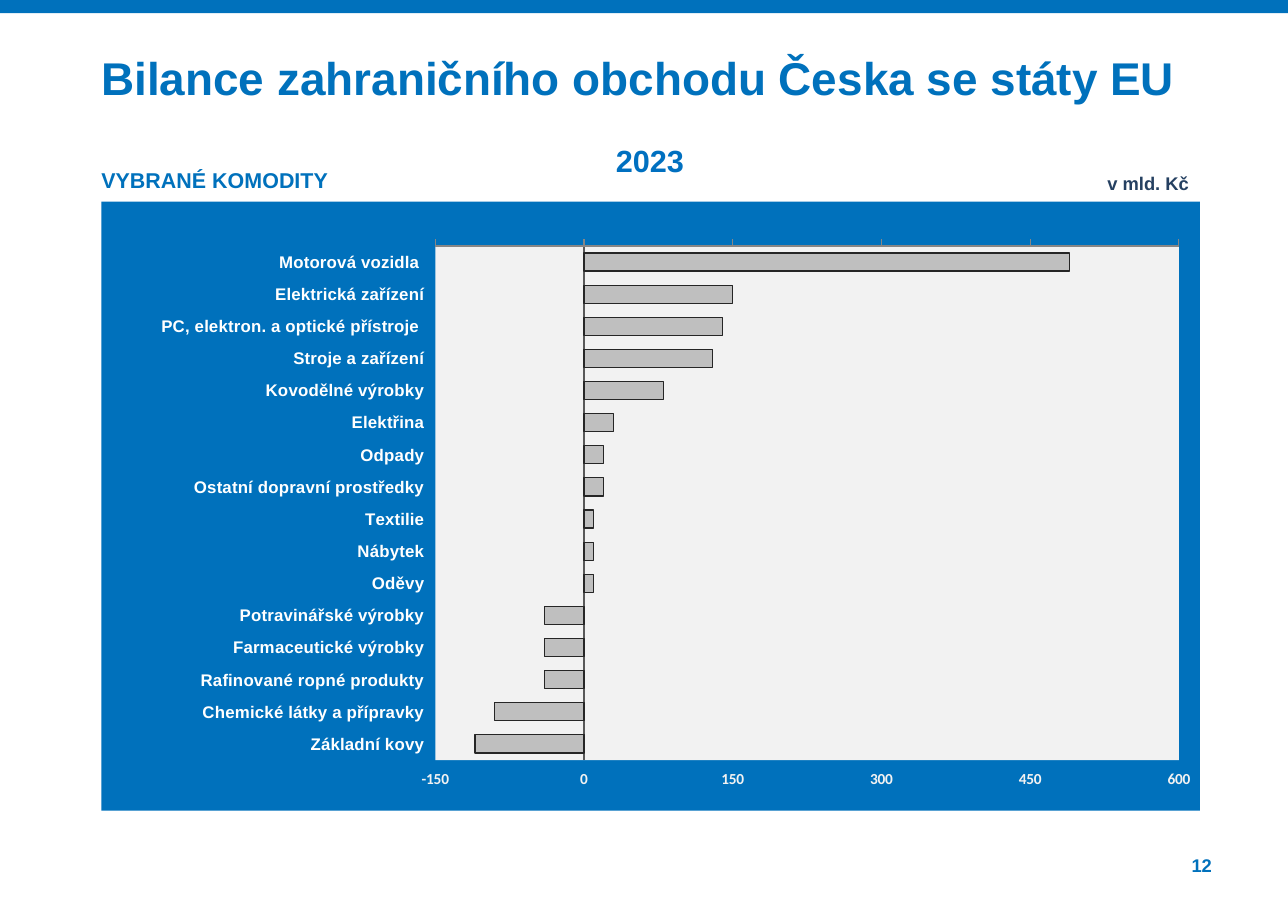
from dataclasses import dataclass

from lxml.etree import SubElement
from pptx import Presentation
from pptx.chart.data import CategoryChartData
from pptx.dml.color import RGBColor
from pptx.enum.chart import XL_CHART_TYPE, XL_TICK_LABEL_POSITION, XL_TICK_MARK
from pptx.enum.shapes import MSO_SHAPE
from pptx.enum.text import MSO_ANCHOR, MSO_AUTO_SIZE, PP_ALIGN
from pptx.oxml import parse_xml
from pptx.oxml.ns import nsdecls, qn
from pptx.util import Inches, Pt

BLUE = "0071BC"
PALE = "F2F2F2"
AXIS_GREY = "868686"


@dataclass(frozen=True)
class Label:
    text: str
    left: float
    top: float
    width: float
    height: float
    size: float
    color: str = BLUE
    align: PP_ALIGN = PP_ALIGN.LEFT
    inset_x: float = 0
    inset_y: float = 0
    line_spacing: float = 1.0


HEADING = Label("Bilance zahraničního obchodu Česka se státy EU", 0.92, 0.51, 9.97, 0.71, 30,
                line_spacing=0.9)
LABELS = [
    Label("12", 10.22, 7.75, 0.78, 0.21, 12, align=PP_ALIGN.RIGHT),
    Label("v mld. Kč", 9.31, 1.51, 1.58, 0.36, 12, "254061", PP_ALIGN.RIGHT, 0.1, 0.05),
    Label("VYBRANÉ KOMODITY", 0.92, 1.52, 3.12, 0.32, 14),
    Label("2023", 5.15, 1.28, 1.5, 0.47, 20, "0070C0", PP_ALIGN.CENTER, 0.1, 0.01),
]
BALANCES = {
    "Motorová vozidla ": 490,
    "Elektrická zařízení": 150,
    "PC, elektron. a optické přístroje ": 140,
    "Stroje a zařízení": 130,
    "Kovodělné výrobky": 80,
    "Elektřina": 30,
    "Odpady": 20,
    "Ostatní dopravní prostředky": 20,
    "Textilie": 10,
    "Nábytek": 10,
    "Oděvy": 10,
    "Potravinářské výrobky": -40,
    "Farmaceutické výrobky": -40,
    "Rafinované ropné produkty": -40,
    "Chemické látky a přípravky": -90,
    "Základní kovy": -110,
}


def rgb(color: str) -> RGBColor:
    return RGBColor.from_string(color)


def set_font(font, name: str, size: float, color: str, bold: bool = True) -> None:
    font.name = name
    font.size = Pt(size)
    font.bold = bold
    font.color.rgb = rgb(color)


def write_label(shape, label: Label) -> None:
    shape.left, shape.top = Inches(label.left), Inches(label.top)
    shape.width, shape.height = Inches(label.width), Inches(label.height)
    frame = shape.text_frame
    frame.word_wrap = True
    frame.auto_size = MSO_AUTO_SIZE.NONE
    frame.vertical_anchor = MSO_ANCHOR.TOP
    frame.margin_left = frame.margin_right = Inches(label.inset_x)
    frame.margin_top = frame.margin_bottom = Inches(label.inset_y)
    paragraph = frame.paragraphs[0]
    paragraph.alignment = label.align
    paragraph.line_spacing = label.line_spacing
    run = paragraph.add_run()
    run.text = label.text
    set_font(run.font, "Arial", label.size, label.color)


def fill_area(parent, color: str, before: tuple[str, ...]) -> None:
    properties = parse_xml(
        f'<c:spPr {nsdecls("c", "a")}><a:solidFill><a:srgbClr val="{color}"/>'
        "</a:solidFill><a:ln><a:noFill/></a:ln></c:spPr>"
    )
    parent.insert_element_before(properties, *before)


def place_plot(plot_area, x: float, y: float, w: float, h: float) -> None:
    for old in plot_area.findall(qn("c:layout")):
        plot_area.remove(old)
    layout = parse_xml(f'<c:layout {nsdecls("c")}/>')
    manual = SubElement(layout, qn("c:manualLayout"))
    settings = {"layoutTarget": "inner", "xMode": "edge", "yMode": "edge",
                "x": x, "y": y, "w": w, "h": h}
    for tag, value in settings.items():
        SubElement(manual, qn(f"c:{tag}")).set("val", str(value))
    plot_area.insert(0, layout)


def add_balance_chart(slide) -> None:
    data = CategoryChartData()
    data.categories = list(BALANCES)
    data.add_series("Series 1", list(BALANCES.values()))
    chart = slide.shapes.add_chart(
        XL_CHART_TYPE.BAR_CLUSTERED,
        Inches(0.92), Inches(1.83), Inches(9.97), Inches(5.53), data,
    ).chart
    chart.has_legend = False
    chart.has_title = False
    set_font(chart.font, "Calibri", 10, "000000", False)

    commodities = chart.category_axis
    commodities.reverse_order = True
    commodities.major_tick_mark = XL_TICK_MARK.NONE
    commodities.tick_label_position = XL_TICK_LABEL_POSITION.LOW
    commodities.format.line.color.rgb = rgb("595959")
    set_font(commodities.tick_labels.font, "Arial", 11, "FFFFFF")

    billions = chart.value_axis
    billions.minimum_scale, billions.maximum_scale = -150, 600
    billions.major_unit = 150
    billions.has_major_gridlines = False
    billions.major_tick_mark = XL_TICK_MARK.OUTSIDE
    billions.tick_label_position = XL_TICK_LABEL_POSITION.HIGH
    billions.format.line.color.rgb = rgb(AXIS_GREY)
    set_font(billions.tick_labels.font, "Calibri", 10, PALE)

    bars = chart.plots[0]
    bars.gap_width = 78
    bars.vary_by_categories = False
    balance = bars.series[0]
    balance.invert_if_negative = False
    balance.format.fill.solid()
    balance.format.fill.fore_color.rgb = rgb("BFBFBF")
    balance.format.line.color.rgb = rgb("262626")
    balance.format.line.width = Pt(0.75)

    chart_space = chart.element
    plot_area = chart_space.chart.plotArea
    place_plot(plot_area, 0.304, 0.073, 0.677, 0.844)
    fill_area(plot_area, PALE, ("c:extLst",))
    fill_area(chart_space, BLUE, ("c:txPr", "c:externalData"))


def main() -> None:
    presentation = Presentation()
    presentation.slide_width = Inches(11.69)
    presentation.slide_height = Inches(8.27)
    slide = presentation.slides.add_slide(presentation.slide_layouts[5])

    top_band = slide.shapes.add_shape(MSO_SHAPE.RECTANGLE, 0, 0, Inches(11.69), Inches(0.12))
    top_band.shadow.inherit = False
    top_band.fill.solid()
    top_band.fill.fore_color.rgb = rgb(BLUE)
    top_band.line.fill.background()

    write_label(slide.shapes.title, HEADING)
    add_balance_chart(slide)
    for label in LABELS:
        write_label(slide.shapes.add_textbox(0, 0, 0, 0), label)
    presentation.save("out.pptx")


if __name__ == "__main__":
    main()
